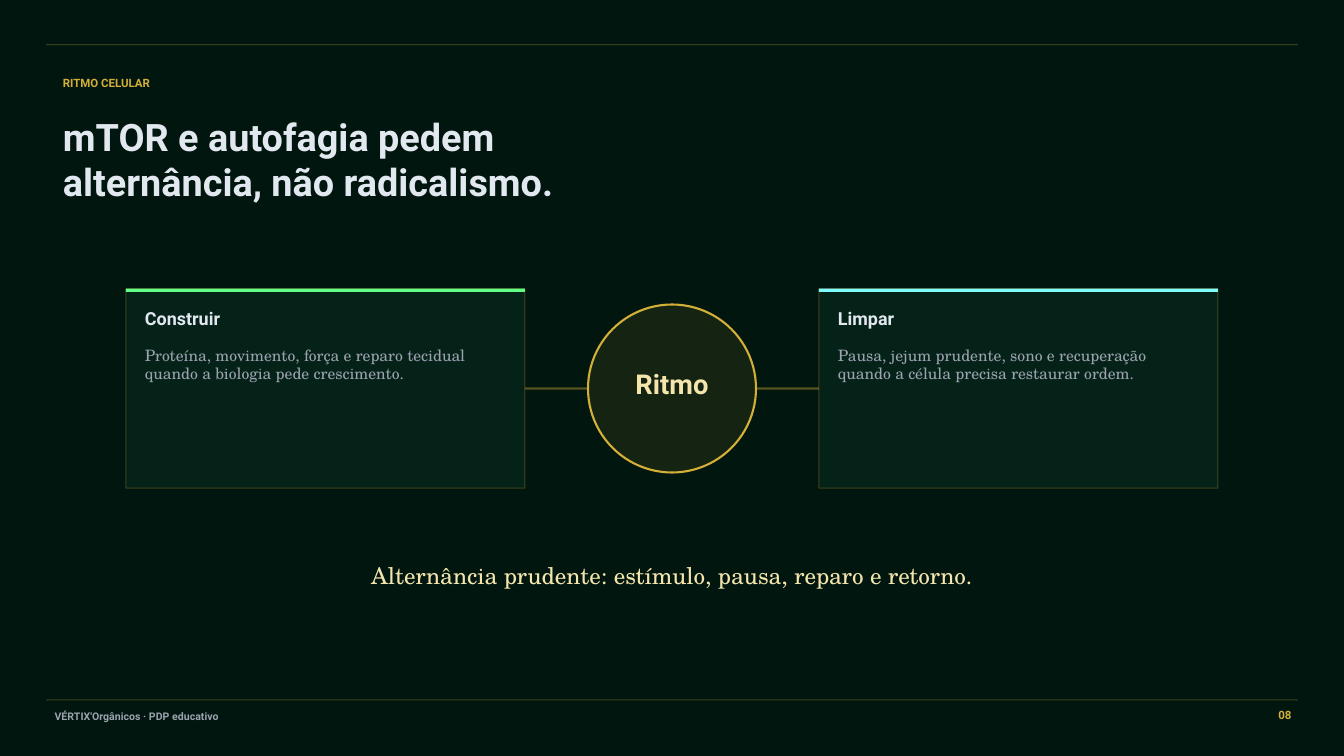
"""Build the cellular rhythm slide: two cards joined by a central circle."""
from dataclasses import dataclass

import lxml.etree
import pptx
import pptx.dml.color
import pptx.enum.shapes
import pptx.enum.text
import pptx.oxml.ns
import pptx.oxml.xmlchemy
import pptx.shapes.autoshape
import pptx.shapes.connector
import pptx.slide
import pptx.util

Pt = pptx.util.Pt
Align = pptx.enum.text.PP_ALIGN
Shape = pptx.enum.shapes.MSO_SHAPE

COLORS = {
    "background": "01160F",
    "gold": "D4AF37",
    "cream": "F3E5AB",
    "light": "E2E8F0",
    "gray": "9CA3AF",
    "panel": "08291F",
    "green": "62FF87",
    "cyan": "7FFCFF",
}
SANS = "Roboto"
SERIF = "TeX Gyre Schola"

PAGE_WIDTH, PAGE_HEIGHT = 960, 540
CARD_TOP, CARD_WIDTH, CARD_HEIGHT = 206.25, 285, 142.5
CARD_PADDING = 13.5
CIRCLE_SIZE = 120
MIDDLE_X = PAGE_WIDTH / 2
MIDDLE_Y = CARD_TOP + CARD_HEIGHT / 2
CIRCLE_RADIUS = CIRCLE_SIZE / 2
RIGHT_SIDE, LEFT_SIDE = 3, 1


@dataclass
class Card:
    left: float
    accent: str
    title: str
    body: str
    joined_side: int
    circle_edge: float


CARDS = [
    Card(90, "green", "Construir",
         "Proteína, movimento, força e reparo tecidual quando a biologia pede crescimento.",
         RIGHT_SIDE, MIDDLE_X - CIRCLE_RADIUS),
    Card(585, "cyan", "Limpar",
         "Pausa, jejum prudente, sono e recuperação quando a célula precisa restaurar ordem.",
         LEFT_SIDE, MIDDLE_X + CIRCLE_RADIUS),
]


def rgb(name: str) -> pptx.dml.color.RGBColor:
    return pptx.dml.color.RGBColor.from_string(COLORS[name])


def set_opacity(properties: pptx.oxml.xmlchemy.BaseOxmlElement, route: str,
                percent: int) -> None:
    color = properties.xpath(f"./{route}/a:srgbClr")[0]
    alpha = lxml.etree.SubElement(color, pptx.oxml.ns.qn("a:alpha"))
    alpha.set("val", str(percent * 1000))


def add_figure(page: pptx.slide.Slide, kind: Shape, left: float, top: float,
               width: float, height: float, fill: str, *, fill_opacity: int = 100,
               line_width: float = 0, line_opacity: int = 100) -> pptx.shapes.autoshape.Shape:
    figure = page.shapes.add_shape(kind, Pt(left), Pt(top), Pt(width), Pt(height))
    figure.shadow.inherit = False
    figure.fill.solid()
    figure.fill.fore_color.rgb = rgb(fill)
    if fill_opacity < 100:
        set_opacity(figure.element.spPr, "a:solidFill", fill_opacity)
    if line_width:
        figure.line.color.rgb = rgb("gold")
        figure.line.width = Pt(line_width)
        if line_opacity < 100:
            set_opacity(figure.element.spPr, "a:ln/a:solidFill", line_opacity)
    else:
        figure.line.fill.background()
    return figure


def add_line(page: pptx.slide.Slide, start: float, end: float, y: float,
             width: float, opacity: int) -> pptx.shapes.connector.Connector:
    line = page.shapes.add_connector(
        pptx.enum.shapes.MSO_CONNECTOR.STRAIGHT, Pt(start), Pt(y), Pt(end), Pt(y))
    line.line.color.rgb = rgb("gold")
    line.line.width = Pt(width)
    set_opacity(line.element.spPr, "a:ln/a:solidFill", opacity)
    lxml.etree.SubElement(line.element.spPr, pptx.oxml.ns.qn("a:effectLst"))
    return line


def add_text(page: pptx.slide.Slide, text: str, left: float, top: float, width: float,
             height: float, *, size: float, color: str, font: str = SANS,
             bold: bool = True, align: Align = Align.LEFT) -> None:
    box = page.shapes.add_textbox(Pt(left), Pt(top), Pt(width), Pt(height))
    frame = box.text_frame
    frame.word_wrap = True
    frame.margin_left = frame.margin_right = frame.margin_top = frame.margin_bottom = 0
    para = frame.paragraphs[0]
    para.alignment = align
    span = para.add_run()
    span.text = text
    span.font.name = font
    span.font.size = Pt(size)
    span.font.bold = bold
    span.font.color.rgb = rgb(color)


def add_card(page: pptx.slide.Slide, card: Card) -> None:
    panel = add_figure(page, Shape.RECTANGLE, card.left, CARD_TOP, CARD_WIDTH, CARD_HEIGHT,
                       "panel", fill_opacity=67, line_width=0.75, line_opacity=27)
    add_figure(page, Shape.RECTANGLE, card.left, CARD_TOP, CARD_WIDTH, 2.25, card.accent)
    text_left = card.left + CARD_PADDING
    text_width = CARD_WIDTH - 2 * CARD_PADDING
    add_text(page, card.title, text_left, CARD_TOP + 13.5, text_width, 19.5,
             size=12.8, color="light")
    add_text(page, card.body, text_left, CARD_TOP + 40.5, text_width, 93,
             size=11.2, color="gray", font=SERIF, bold=False)
    link = add_line(page, card.left, card.circle_edge, MIDDLE_Y, 1.5, 40)
    link.begin_connect(panel, card.joined_side)


def main() -> None:
    deck = pptx.Presentation()
    deck.slide_width, deck.slide_height = Pt(PAGE_WIDTH), Pt(PAGE_HEIGHT)
    page = deck.slides.add_slide(deck.slide_layouts[6])
    page.background.fill.solid()
    page.background.fill.fore_color.rgb = rgb("background")

    for y in (31.9, 499.9):
        add_line(page, 33, PAGE_WIDTH - 33, y, 0.75, 27)
    add_text(page, "RITMO CELULAR", 45, 54, 390, 16.5, size=8.2, color="gold")
    add_text(page, "mTOR e autofagia pedem alternância, não radicalismo.",
             45, 81, 442.5, 99, size=27, color="light")

    for card in CARDS:
        add_card(page, card)
    add_figure(page, Shape.OVAL, MIDDLE_X - CIRCLE_RADIUS, MIDDLE_Y - CIRCLE_RADIUS,
               CIRCLE_SIZE, CIRCLE_SIZE, "gold", fill_opacity=9, line_width=1.5)
    add_text(page, "Ritmo", MIDDLE_X - 45, 262.5, 90, 25.5,
             size=19.5, color="cream", align=Align.CENTER)

    add_text(page, "Alternância prudente: estímulo, pausa, reparo e retorno.",
             183.75, 401.25, 592.5, 22.5, size=16.5, color="cream", font=SERIF,
             bold=False, align=Align.CENTER)
    add_text(page, "VÉRTIX'Orgânicos · PDP educativo", 39, 507, 390, 13.5,
             size=7.5, color="gray")
    add_text(page, "08", 892.5, 505.5, 30, 13.5, size=8.2, color="gold", align=Align.RIGHT)
    deck.save("out.pptx")


if __name__ == "__main__":
    main()
